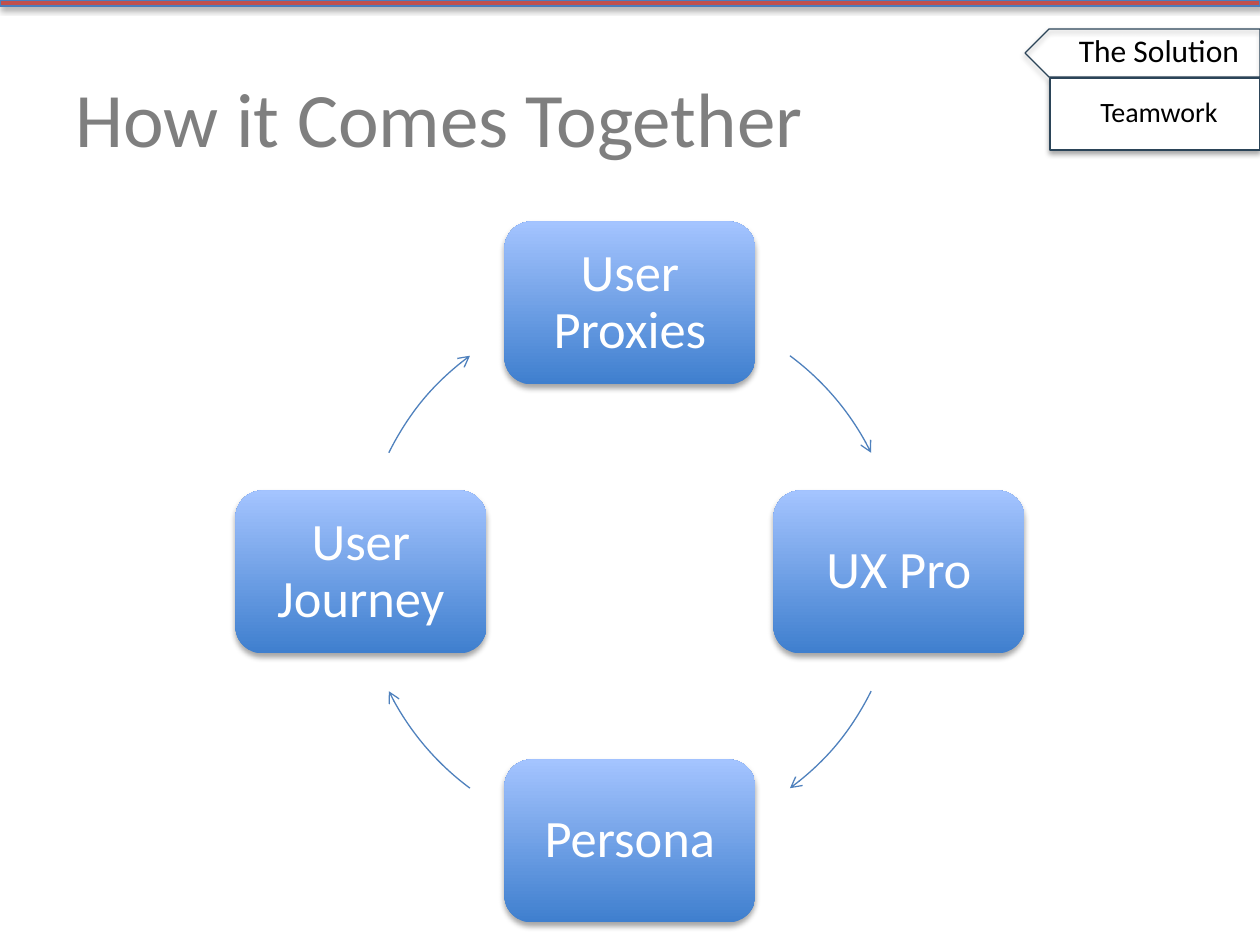
import lxml.etree
import pptx
import pptx.dml.color
import pptx.enum.shapes
import pptx.enum.text
import pptx.oxml
import pptx.oxml.ns
import pptx.util

RGB = pptx.dml.color.RGBColor
SHAPE = pptx.enum.shapes.MSO_SHAPE
ALIGN = pptx.enum.text.PP_ALIGN
ANCHOR = pptx.enum.text.MSO_ANCHOR

PX = 914400 / 126  # EMU in one px
FONT = "Calibri"

WHITE = RGB(0xFF, 0xFF, 0xFF)
BLACK = RGB(0x00, 0x00, 0x00)
TITLE_GRAY = RGB(0x7F, 0x7F, 0x7F)
BAR_RED = RGB(0xC0, 0x50, 0x4D)
BAR_EDGE = RGB(0x4B, 0x7E, 0xBC)
NODE_DARK = RGB(0x3F, 0x7F, 0xCE)
NODE_LIGHT = RGB(0xA4, 0xC4, 0xFF)
ARC_BLUE = RGB(0x4F, 0x81, 0xBD)
TAG_EDGE = RGB(0x2B, 0x44, 0x58)

# Cycle geometry: node centres and arrows lie on one circle
CENTER_X, CENTER_Y, RADIUS = 630, 572, 269
NODE_W, NODE_H = 251, 163
NODES = [("User Proxies", 0, -1), ("UX Pro", 1, 0),
         ("Persona", 0, 1), ("User Journey", -1, 0)]
ARC_STARTS = [306.5, 26.3, 126.5, 206.3]
ARC_SWEEP = 27.2

SHADOW_XML = (
    '<a:outerShdw %s blurRad="40000" dist="23000" dir="5400000" rotWithShape="0">'
    '<a:srgbClr val="000000"><a:alpha val="35000"/></a:srgbClr></a:outerShdw>'
    % pptx.oxml.ns.nsdecls("a"))


def px(*lengths):
    return [pptx.util.Emu(round(length * PX)) for length in lengths]


def set_format(target, values):
    for name, value in values.items():
        setattr(target, name, value)


def write_text(frame, text, size, color, frame_format=None, paragraph_format=None):
    set_format(frame, {"word_wrap": True, **(frame_format or {})})
    paragraph = frame.paragraphs[0]
    paragraph.text = text
    set_format(paragraph, {"alignment": ALIGN.CENTER, **(paragraph_format or {})})
    set_format(paragraph.font, {"name": FONT, "size": pptx.util.Pt(size)})
    paragraph.font.color.rgb = color


def add_block(slide, preset, box, fill=None, edge=None, shadow=True):
    block = slide.shapes.add_shape(preset, *px(*box))
    if fill is None:
        block.fill.background()
    else:
        block.fill.solid()
        block.fill.fore_color.rgb = fill
    if edge is None:
        block.line.fill.background()
    else:
        block.line.color.rgb = edge
        block.line.width = pptx.util.Pt(0.75)
    block.shadow.inherit = False
    if shadow:
        effects = block._element.spPr.find(pptx.oxml.ns.qn("a:effectLst"))
        effects.append(pptx.oxml.parse_xml(SHADOW_XML))
    return block


def add_title(slide, text):
    title = slide.shapes.title
    set_format(title, dict(zip(("left", "top", "width", "height"),
                               px(63, 38, 1134, 157))))
    write_text(title.text_frame, text, 44, TITLE_GRAY,
               {"vertical_anchor": ANCHOR.MIDDLE}, {"alignment": ALIGN.LEFT})


def add_node(slide, label, dx, dy):
    left = CENTER_X + dx * RADIUS - NODE_W / 2
    top = CENTER_Y + dy * RADIUS - NODE_H / 2
    node = add_block(slide, SHAPE.ROUNDED_RECTANGLE, (left, top, NODE_W, NODE_H))
    node.fill.gradient()
    node.fill.gradient_angle = 90
    for stop, color in zip(node.fill.gradient_stops, (NODE_DARK, NODE_LIGHT)):
        stop.color.rgb = color
    margins = ("margin_left", "margin_top", "margin_right", "margin_bottom")
    write_text(node.text_frame, label, 30, WHITE,
               {"vertical_anchor": ANCHOR.MIDDLE,
                **dict.fromkeys(margins, pptx.util.Inches(0.12))},
               {"line_spacing": 0.9})


def add_arc_arrow(slide, start):
    box = (CENTER_X - RADIUS, CENTER_Y - RADIUS, 2 * RADIUS, 2 * RADIUS)
    arc = add_block(slide, SHAPE.ARC, box, edge=ARC_BLUE, shadow=False)
    # Angles are stored in 1/60000 degree, adjustments in 1/100000
    for index, angle in enumerate((start, start + ARC_SWEEP)):
        arc.adjustments[index] = angle * 0.6
    lxml.etree.SubElement(arc.line._get_or_add_ln(),
                          pptx.oxml.ns.qn("a:tailEnd"), type="arrow")


def add_label(slide, text, box, size):
    label = slide.shapes.add_textbox(*px(*box))
    write_text(label.text_frame, text, size, BLACK)


def add_section_tag(slide):
    add_label(slide, "The Solution", (1058, 25, 202, 50), 18)
    pointer = add_block(slide, SHAPE.PENTAGON, (1025, 29, 235, 48), edge=TAG_EDGE)
    pointer._element.spPr.xfrm.set("flipH", "1")
    add_block(slide, SHAPE.RECTANGLE, (1050, 78, 210, 72), WHITE, TAG_EDGE)
    add_label(slide, "Teamwork", (1058, 88, 202, 47), 16)


def main():
    deck = pptx.Presentation()
    set_format(deck, dict(zip(("slide_width", "slide_height"), px(1260, 945))))
    slide = deck.slides.add_slide(deck.slide_layouts[5])

    # Top bar and title
    add_block(slide, SHAPE.RECTANGLE, (0, 0, 1260, 6), BAR_RED, BAR_EDGE)
    add_title(slide, "How it Comes Together")

    # Cycle of four roles
    for (label, dx, dy), start in zip(NODES, ARC_STARTS):
        add_node(slide, label, dx, dy)
        add_arc_arrow(slide, start)

    # Section tag in the corner
    add_section_tag(slide)
    deck.save("out.pptx")


if __name__ == "__main__":
    main()
